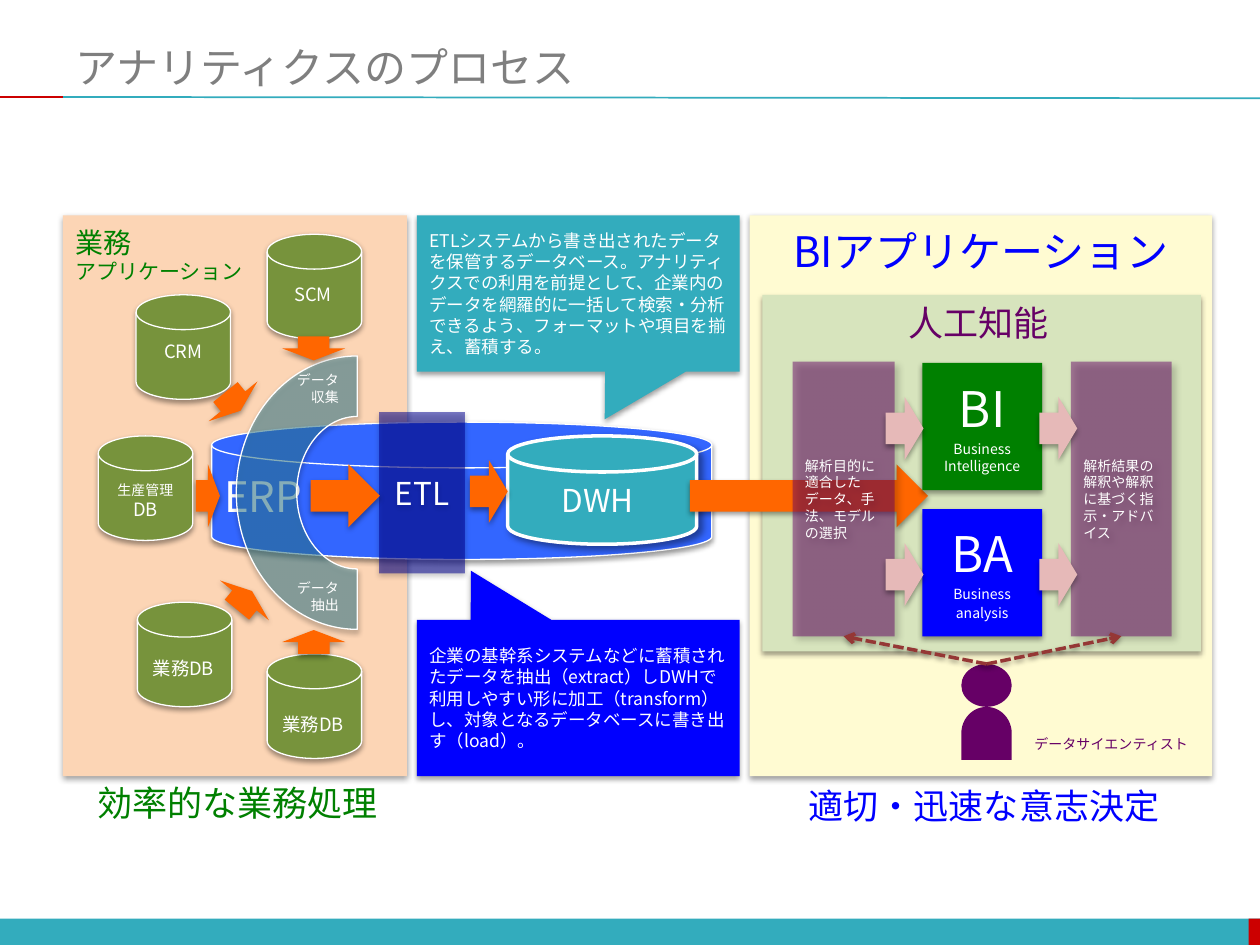
from copy import deepcopy

from lxml.etree import SubElement
from pptx import Presentation
from pptx.dml.color import RGBColor
from pptx.enum.dml import MSO_LINE
from pptx.enum.shapes import MSO_CONNECTOR, MSO_SHAPE as Kind
from pptx.enum.text import MSO_ANCHOR, MSO_AUTO_SIZE, PP_ALIGN
from pptx.oxml.ns import qn
from pptx.util import Inches, Pt

WHITE = RGBColor(0xFF, 0xFF, 0xFF)
BLACK = RGBColor(0, 0, 0)
GRAY = RGBColor(0x7F, 0x7F, 0x7F)
TEAL = RGBColor(0x33, 0xAC, 0xBD)
RED = RGBColor(0xCC, 0, 0)
CREAM = RGBColor(0xFF, 0xFB, 0xD2)
SAGE = RGBColor(0xD7, 0xE4, 0xBD)
PEACH = RGBColor(0xFC, 0xD5, 0xB5)
AZURE = RGBColor(0x33, 0x66, 0xFF)
ARC_TEAL = RGBColor(0x31, 0x85, 0x9C)
NAVY = RGBColor(0, 0, 0x90)
OLIVE = RGBColor(0x77, 0x93, 0x3C)
ORANGE = RGBColor(0xFF, 0x66, 0)
GREEN = RGBColor(0, 0x80, 0)
BLUE = RGBColor(0, 0, 0xFF)
PURPLE = RGBColor(0x66, 0, 0x66)
PINK = RGBColor(0xE6, 0xB9, 0xB8)
MAROON = RGBColor(0x95, 0x37, 0x35)
SOFT = (38, 3.1, 1.6, 90)
DEEP = (40, 4, 3, 45)
LEFT, CENTER, RIGHT = PP_ALIGN.LEFT, PP_ALIGN.CENTER, PP_ALIGN.RIGHT
CJK = "Noto Sans CJK JP"

prs = Presentation()
prs.slide_width, prs.slide_height = Inches(10), Inches(7.5)
slide = prs.slides.add_slide(prs.slide_layouts[6])
shapes = slide.shapes
COL, ROW = prs.slide_width / 100, prs.slide_height / 75


def draw(kind, x, y, w, h, fill, alpha=100, line=0, shadow=SOFT, turn=0, adjust=()):
    part = shapes.add_shape(kind, round(x * COL), round(y * ROW), round(w * COL), round(h * ROW))
    part.rotation = turn
    for index, value in enumerate(adjust):
        part.adjustments[index] = value
    part.fill.solid()
    part.fill.fore_color.rgb = fill
    if alpha < 100:
        color = part._element.spPr.find(f".//{qn('a:srgbClr')}")
        SubElement(color, qn("a:alpha"), val=str(alpha * 1000))
    if line:
        part.line.color.rgb = WHITE
        part.line.width = Pt(line)
    else:
        part.line.fill.background()
    part.shadow.inherit = False
    if shadow:
        opacity, blur, distance, angle = shadow
        cast = SubElement(part._element.spPr.find(qn("a:effectLst")), qn("a:outerShdw"),
                          blurRad=str(Pt(blur)), dist=str(Pt(distance)),
                          dir=str(angle * 60000), rotWithShape="0")
        tint = SubElement(cast, qn("a:srgbClr"), val=str(BLACK))
        SubElement(tint, qn("a:alpha"), val=str(opacity * 1000))
    return part


def write(holder, *lines, color=WHITE, align=LEFT, font=CJK, wrap=True, anchor=MSO_ANCHOR.MIDDLE, gap=0):
    frame = holder.text_frame
    frame.word_wrap = wrap
    frame.vertical_anchor = anchor
    for index, (text, size) in enumerate(lines):
        paragraph = frame.add_paragraph() if index else frame.paragraphs[0]
        paragraph.alignment = align
        if index and gap:
            paragraph.space_before = Pt(size * gap)
        run = paragraph.add_run()
        run.text = text
        run.font.size = Pt(size)
        run.font.color.rgb = color
        run.font.name = font
        SubElement(run._r.get_or_add_rPr(), qn("a:ea"), typeface=CJK)


draw(Kind.RECTANGLE, 0, 72.9, 100, 2.2, TEAL, shadow=None)
draw(Kind.RECTANGLE, 99.1, 72.9, 1, 2.2, RED, shadow=None)
for start, end, end_row, color in [(5, 100, 7.8, TEAL), (0, 5, 7.7, RED)]:
    rule = shapes.add_connector(MSO_CONNECTOR.STRAIGHT, round(start * COL), round(7.7 * ROW),
                                round(end * COL), round(end_row * ROW))
    rule.line.color.rgb = color
    rule.line.width = Pt(1)
    SubElement(rule._element.spPr, qn("a:effectLst"))

draw(Kind.ROUNDED_RECTANGLE, 59.5, 17.1, 36.7, 44.5, CREAM, adjust=[0])
ai_panel = draw(Kind.ROUNDED_RECTANGLE, 60.5, 23.4, 34.8, 28.3, SAGE, adjust=[0])
draw(Kind.ROUNDED_RECTANGLE, 5, 17.1, 27.3, 44.5, PEACH, adjust=[0])

erp = draw(Kind.FLOWCHART_MAGNETIC_DISK, 16.8, 33.5, 39.7, 10.9, AZURE, line=0.75)
write(erp, ("ERP", 24))
erp.text_frame.margin_bottom = Inches(0.15)
draw(Kind.FLOWCHART_MAGNETIC_DISK, 40.3, 34.6, 15, 8.6, TEAL, line=2, shadow=DEEP)
draw(Kind.BLOCK_ARC, 17.5, 29.5, 21.7, 19.2, ARC_TEAL, alpha=47, line=0.75, turn=270)
etl = draw(Kind.ROUNDED_RECTANGLE, 30.1, 32.7, 6.8, 12.8, NAVY, alpha=52, adjust=[0])
write(etl, ("ETL", 18), align=CENTER)

for x, y in [(21.2, 18.6), (7.8, 34.6), (21.2, 51.9), (10.8, 23.4), (10.9, 47.8)]:
    draw(Kind.FLOWCHART_MAGNETIC_DISK, x, y, 7.5, 8.3, OLIVE, line=0.75)

for x, y, length, turn in [(14, 38.4, 1.9, 270), (22.4, 26.7, 1.9, 0), (22.4, 50, 1.9, 180),
                           (16, 30.9, 1.9, 320.8), (16.9, 46.7, 1.9, 219.2),
                           (24.9, 36.6, 5.5, 270), (36.3, 37.5, 3, 270), (61.7, 29.9, 18.9, 270)]:
    draw(Kind.DOWN_ARROW, x, y, 5, length, ORANGE, turn=turn)

for y, fill, pointer, text in [
    (49.2, BLUE, (-0.333, -0.815),
     "企業の基幹系システムなどに蓄積されたデータを抽出（extract）しDWHで利用しやすい形に加工"
     "（transform）し、対象となるデータベースに書き出す（load）。"),
    (17.1, TEAL, (0.082, 0.805),
     "ETLシステムから書き出されたデータを保管するデータベース。アナリティクスでの利用を前提として、"
     "企業内のデータを網羅的に一括して検索・分析できるよう、フォーマットや項目を揃え、蓄積する。"),
]:
    callout = draw(Kind.RECTANGULAR_CALLOUT, 33.1, y, 25.6, 12.4, fill, adjust=pointer)
    write(callout, (text, 10))

for y, fill, lines in [
    (28.8, GREEN, [("BI", 28), ("Business Intelligence", 8)]),
    (40.4, BLUE, [("BA", 28), ("Business", 8), ("analysis", 8)]),
]:
    method = draw(Kind.ROUNDED_RECTANGLE, 73.2, y, 9.5, 10.1, fill, adjust=[0])
    write(method, *lines, align=CENTER, gap=0.2)

stages = []
for x, w, text in [(85, 8, "解析結果の解釈や解釈に基づく指示・アドバイス"),
                   (62.9, 8.1, "解析目的に適合したデータ、手法、モデルの選択")]:
    stage = draw(Kind.RECTANGLE, x, 28.7, w, 21.8, PURPLE, alpha=48, shadow=DEEP)
    write(stage, (text, 8))
    stages.append(stage)

for x in (81.5, 69.3):
    for y in (32.5, 44.1):
        draw(Kind.DOWN_ARROW, x, y, 5, 3, PINK, turn=270)

draw(Kind.FLOWCHART_DELAY, 76.2, 56.2, 4.2, 4, PURPLE, shadow=None, turn=270)
head = draw(Kind.OVAL, 76.3, 52.7, 4, 3.4, PURPLE, shadow=None)
for stage in stages:
    link = shapes.add_connector(MSO_CONNECTOR.STRAIGHT, 0, 0, 0, 0)
    link.begin_connect(head, 0)
    link.end_connect(stage, 2)
    link.line.color.rgb = MAROON
    link.line.width = Pt(2)
    link.line.dash_style = MSO_LINE.SQUARE_DOT
    SubElement(link.line._get_or_add_ln(), qn("a:tailEnd"), type="arrow")
    link._element.spPr.append(deepcopy(ai_panel._element.spPr.find(qn("a:effectLst"))))

for x, y, w, h, lines, color, align, wrap in [
    (43.3, 37.7, 8.3, 4, [("DWH", 18)], WHITE, CENTER, True),
    (21.3, 22, 7.1, 2.8, [("SCM", 10.5)], WHITE, CENTER, True),
    (11, 26.5, 7.1, 2.8, [("CRM", 10.5)], WHITE, CENTER, True),
    (8, 37.7, 7.1, 4.1, [("生産管理", 8), ("DB", 10.5)], WHITE, CENTER, True),
    (11, 51.7, 7.1, 2.8, [("業務DB", 10.5)], WHITE, CENTER, True),
    (21.3, 56.1, 7.1, 2.8, [("業務DB", 10.5)], WHITE, CENTER, True),
    (22.5, 29, 5.4, 3.7, [("データ", 8), ("収集", 8)], WHITE, RIGHT, False),
    (22.5, 45.5, 5.4, 3.7, [("データ", 8), ("抽出", 8)], WHITE, RIGHT, False),
    (6.5, 61.5, 24.5, 4.4, [("効率的な業務処理", 20)], GREEN, RIGHT, False),
    (63.2, 61.8, 30.1, 4.4, [("適切・迅速な意志決定", 20)], BLUE, LEFT, False),
    (59.5, 17.4, 36.7, 5, [("BIアプリケーション", 24)], BLUE, CENTER, True),
    (5, 17.4, 15.5, 5.7, [("業務", 16), ("アプリケーション", 12)], GREEN, LEFT, False),
    (81, 57.9, 14.4, 2.4, [("データサイエンティスト", 8)], PURPLE, CENTER, False),
    (71.1, 23.4, 13.2, 4.4, [("人工知能", 20)], PURPLE, LEFT, False),
]:
    label = shapes.add_textbox(round(x * COL), round(y * ROW), round(w * COL), round(h * ROW))
    write(label, *lines, color=color, align=align, wrap=wrap, anchor=MSO_ANCHOR.TOP)
    label.text_frame.auto_size = MSO_AUTO_SIZE.SHAPE_TO_FIT_TEXT

title = shapes.add_textbox(round(5 * COL), round(3 * ROW), round(95 * COL), round(4.6 * ROW))
write(title, ("アナリティクスのプロセス", 24), color=GRAY, font="Calibri")

prs.save("out.pptx")
